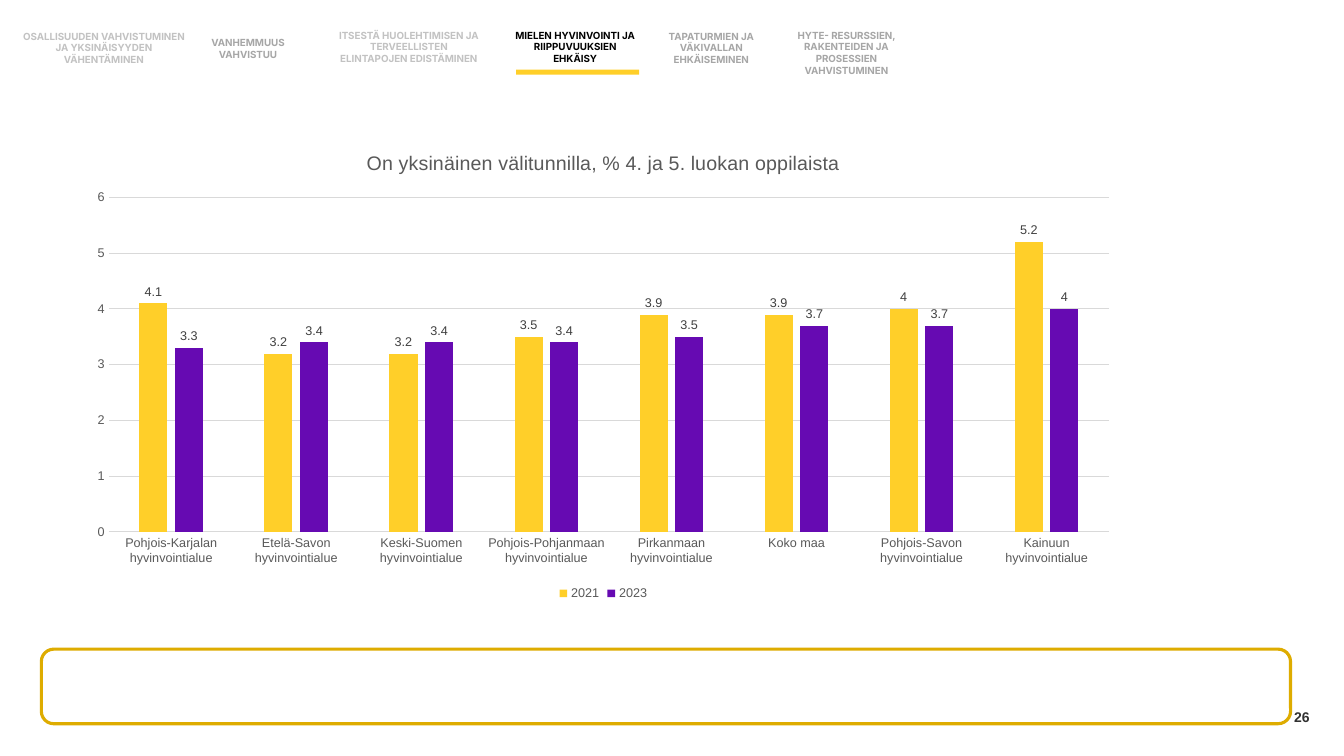
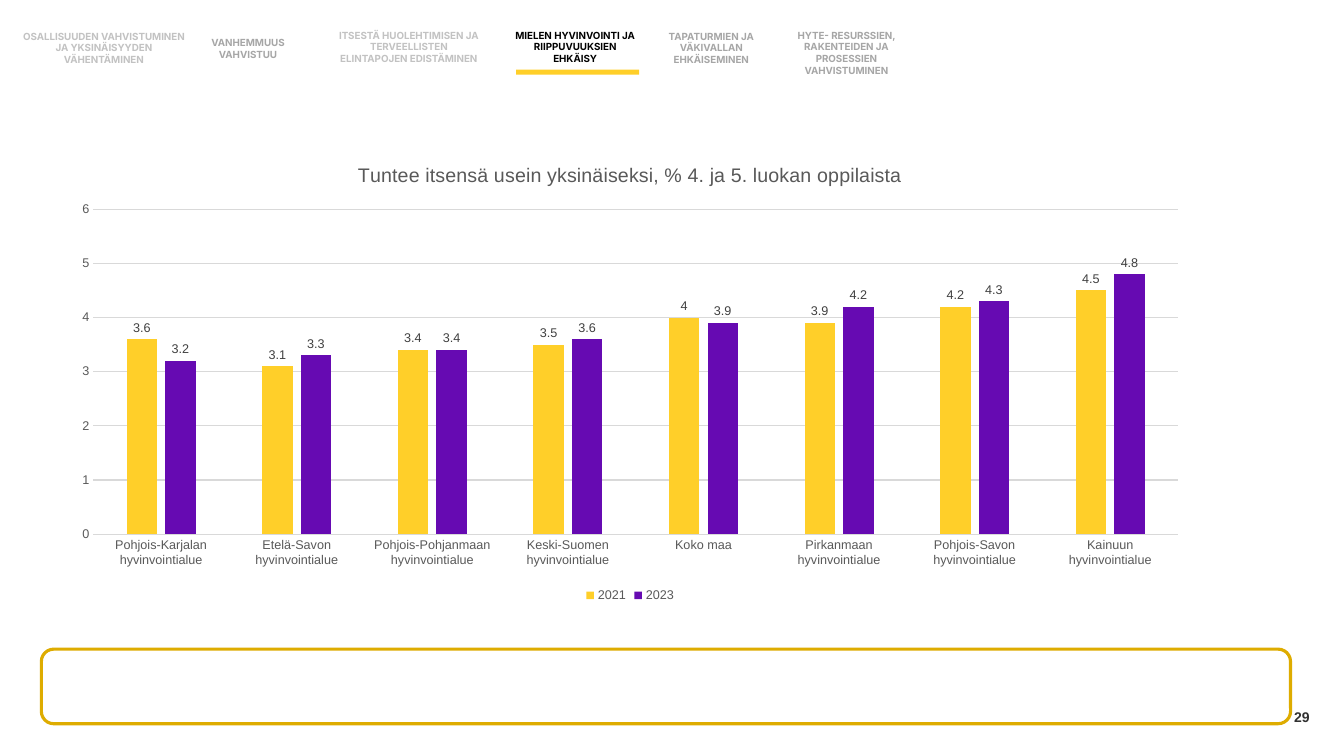
import pptx
import pptx.chart.data
import pptx.dml.color
import pptx.enum.chart
import pptx.enum.shapes
import pptx.enum.text
import pptx.util

Inches = pptx.util.Inches
Pt = pptx.util.Pt
RGBColor = pptx.dml.color.RGBColor
ALIGN = pptx.enum.text.PP_ALIGN
SHAPE = pptx.enum.shapes.MSO_SHAPE

# Colours and fonts
YELLOW = RGBColor(0xFF, 0xCF, 0x29)
GOLD = RGBColor(0xDE, 0xAC, 0x00)
PURPLE = RGBColor(0x66, 0x0A, 0xB2)
BLACK = RGBColor(0x00, 0x00, 0x00)
INK = RGBColor(0x31, 0x31, 0x31)
LABEL_GREY = RGBColor(0x40, 0x40, 0x40)
AXIS_GREY = RGBColor(0x59, 0x59, 0x59)
TAB_GREY = RGBColor(0xA6, 0xA6, 0xA6)
PALE_GREY = RGBColor(0xC2, 0xC2, 0xC2)
GRID_GREY = RGBColor(0xD9, 0xD9, 0xD9)
CHART_FONT = "Arial"
TAB_FONT = "Inter"

# Theme tabs along the top: text, colour, (left, top, width, height)
TABS = [
    ("OSALLISUUDEN VAHVISTUMINEN JA YKSINÄISYYDEN VÄHENTÄMINEN",
     PALE_GREY, (0.22, 0.24, 1.62, 0.47)),
    ("VANHEMMUUS VAHVISTUU", TAB_GREY, (1.85, 0.36, 1.22, 0.24)),
    ("ITSESTÄ HUOLEHTIMISEN JA TERVEELLISTEN ELINTAPOJEN EDISTÄMINEN",
     PALE_GREY, (3.35, 0.29, 1.41, 0.35)),
    ("MIELEN HYVINVOINTI JA RIIPPUVUUKSIEN EHKÄISY",
     BLACK, (5.07, 0.29, 1.27, 0.35)),
    ("TAPATURMIEN JA VÄKIVALLAN EHKÄISEMINEN",
     TAB_GREY, (6.42, 0.3, 1.27, 0.35)),
    ("HYTE- RESURSSIEN, RAKENTEIDEN JA PROSESSIEN\nVAHVISTUMINEN",
     TAB_GREY, (7.69, 0.29, 1.41, 0.47)),
]

# Chart content; a region is the first part of its full area name
KOKO_MAA = "Koko maa"
SLIDES = [
    {
        "number": "26",
        "title": "On yksinäinen välitunnilla, % 4. ja 5. luokan oppilaista",
        "box": (0.76, 1.31, 10.45, 4.69),
        "regions": ["Pohjois-Karjalan", "Etelä-Savon", "Keski-Suomen",
                    "Pohjois-Pohjanmaan", "Pirkanmaan", KOKO_MAA,
                    "Pohjois-Savon", "Kainuun"],
        "2021": [4.1, 3.2, 3.2, 3.5, 3.9, 3.9, 4, 5.2],
        "2023": [3.3, 3.4, 3.4, 3.4, 3.5, 3.7, 3.7, 4],
    },
    {
        "number": "29",
        "title": "Tuntee itsensä usein yksinäiseksi, "
                 "% 4. ja 5. luokan oppilaista",
        "box": (0.59, 1.43, 11.32, 4.59),
        "regions": ["Pohjois-Karjalan", "Etelä-Savon", "Pohjois-Pohjanmaan",
                    "Keski-Suomen", KOKO_MAA, "Pirkanmaan",
                    "Pohjois-Savon", "Kainuun"],
        "2021": [3.6, 3.1, 3.4, 3.5, 4, 3.9, 4.2, 4.5],
        "2023": [3.2, 3.3, 3.4, 3.6, 3.9, 4.2, 4.3, 4.8],
    },
]
YEAR_COLOURS = {"2021": YELLOW, "2023": PURPLE}


def place(box):
    return [Inches(length) for length in box]


def style_font(font, size, colour, name=CHART_FONT, bold=False):
    font.size = Pt(size)
    font.name = name
    font.bold = bold
    font.color.rgb = colour


def write(frame, text, *, align=ALIGN.CENTER, **font_format):
    """Fill a text frame, one paragraph for each line of text."""
    for index, line in enumerate(text.split("\n")):
        paragraph = frame.add_paragraph() if index else frame.paragraphs[0]
        paragraph.alignment = align
        run = paragraph.add_run()
        run.text = line
        style_font(run.font, **font_format)


def add_text(slide, text, box, **text_format):
    frame = slide.shapes.add_textbox(*place(box)).text_frame
    frame.word_wrap = True
    frame.vertical_anchor = pptx.enum.text.MSO_ANCHOR.MIDDLE
    frame.margin_left = frame.margin_right = 0
    frame.margin_top = frame.margin_bottom = 0
    write(frame, text, **text_format)


def add_block(slide, kind, box, fill=None, line=None):
    block = slide.shapes.add_shape(kind, *place(box))
    block.shadow.inherit = False
    if fill is None:
        block.fill.background()
    else:
        block.fill.solid()
        block.fill.fore_color.rgb = fill
    if line is None:
        block.line.fill.background()
    else:
        block.line.color.rgb = line
        block.line.width = Pt(2.25)


def add_frame(slide, number):
    """Add the parts that every slide shares."""
    add_text(slide, number, (9.99, 6.91, 3, 0.4), align=ALIGN.RIGHT,
             size=10, colour=INK, bold=True)
    for text, colour, box in TABS:
        add_text(slide, text, box, size=7, colour=colour,
                 name=TAB_FONT, bold=True)
    # Marker under the current theme and the empty comment box
    add_block(slide, SHAPE.RECTANGLE, (5.12, 0.69, 1.22, 0.05), fill=YELLOW)
    add_block(slide, SHAPE.ROUNDED_RECTANGLE, (0.41, 6.44, 12.39, 0.74),
              line=GOLD)


def style_axes(chart):
    no_tick = pptx.enum.chart.XL_TICK_MARK.NONE
    areas, percent = chart.category_axis, chart.value_axis
    for axis in (areas, percent):
        axis.major_tick_mark = axis.minor_tick_mark = no_tick
        style_font(axis.tick_labels.font, 9, AXIS_GREY)
    percent.minimum_scale, percent.maximum_scale = 0, 6
    percent.major_unit = 1
    percent.has_major_gridlines = True
    percent.format.line.fill.background()
    for line in (areas.format.line, percent.major_gridlines.format.line):
        line.color.rgb = GRID_GREY
        line.width = Pt(0.75)


def add_column_chart(slide, content):
    data = pptx.chart.data.CategoryChartData()
    data.categories = [
        region if region == KOKO_MAA else f"{region} hyvinvointialue"
        for region in content["regions"]]
    for year in YEAR_COLOURS:
        data.add_series(year, content[year])
    chart = slide.shapes.add_chart(
        pptx.enum.chart.XL_CHART_TYPE.COLUMN_CLUSTERED,
        *place(content["box"]), data).chart
    style_font(chart.font, 10, BLACK)
    write(chart.chart_title.text_frame, content["title"],
          size=14, colour=AXIS_GREY)
    style_axes(chart)

    # Legend
    chart.has_legend = True
    chart.legend.position = pptx.enum.chart.XL_LEGEND_POSITION.BOTTOM
    chart.legend.include_in_layout = False
    style_font(chart.legend.font, 9, AXIS_GREY)

    # Columns and their value labels
    columns = chart.plots[0]
    columns.vary_by_categories = False
    columns.gap_width, columns.overlap = 219, -27
    for series, colour in zip(columns.series, YEAR_COLOURS.values()):
        series.format.fill.solid()
        series.format.fill.fore_color.rgb = colour
        series.invert_if_negative = False
        labels = series.data_labels
        labels.show_value = True
        labels.position = pptx.enum.chart.XL_LABEL_POSITION.OUTSIDE_END
        style_font(labels.font, 9, LABEL_GREY)


def main():
    deck = pptx.Presentation()
    deck.slide_width, deck.slide_height = Inches(13.33), Inches(7.5)
    blank_layout = deck.slide_layouts[6]
    for content in SLIDES:
        slide = deck.slides.add_slide(blank_layout)
        add_frame(slide, content["number"])
        add_column_chart(slide, content)
    deck.save("out.pptx")


if __name__ == "__main__":
    main()
